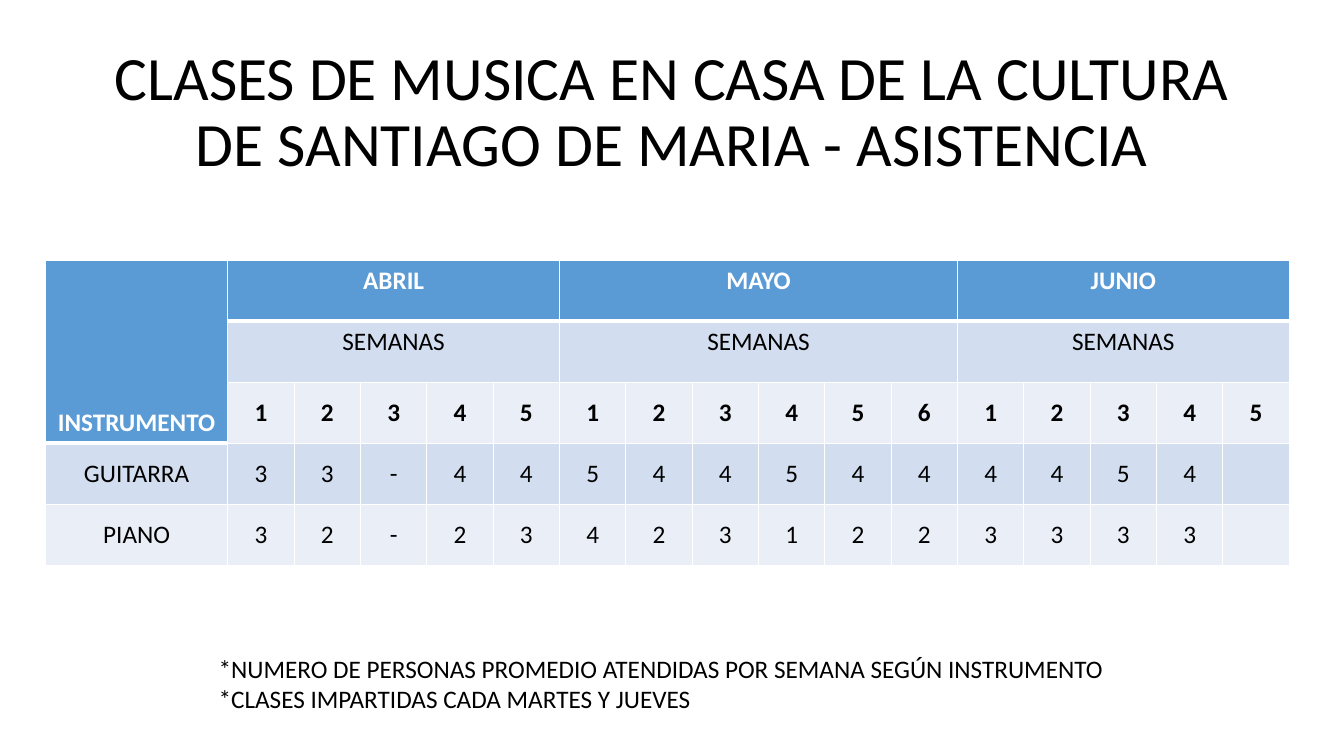
from dataclasses import dataclass

from lxml import etree
from pptx import Presentation
from pptx import util as u
from pptx.dml.color import RGBColor
from pptx.enum import text
from pptx.oxml import ns
from pptx.slide import Slide
from pptx.table import Table
from pptx.text.text import TextFrame

"""Build the music class attendance slide."""


@dataclass(frozen=True)
class Theme:
    font: str = "Calibri"
    title_size: int = 44
    body_size: int = 18
    black: str = "000000"
    white: str = "FFFFFF"
    header: str = "5B9BD5"
    dark_band: str = "D2DEEF"
    light_band: str = "EAEFF7"
    thin_rule: float = 1
    thick_rule: float = 3


@dataclass(frozen=True)
class Month:
    name: str
    weeks: int


@dataclass(frozen=True)
class Instrument:
    name: str
    attendance: tuple[str, ...]


@dataclass(frozen=True)
class TextBlock:
    lines: tuple[str, ...]
    box: tuple[float, float, float, float]
    size: int
    align: text.PP_ALIGN
    anchor: text.MSO_ANCHOR
    spacing: float


@dataclass(frozen=True)
class CellStyle:
    fill: str
    color: str
    bold: bool = False
    anchor: text.MSO_ANCHOR = text.MSO_ANCHOR.MIDDLE
    top: float = 1
    bottom: float = 1


THEME = Theme()
MONTHS = (Month("ABRIL", 5), Month("MAYO", 6), Month("JUNIO", 5))
INSTRUMENTS = (
    Instrument("GUITARRA", tuple("33-445445444454") + ("",)),
    Instrument("PIANO", tuple("32-234231223333") + ("",)),
)
TITLE = TextBlock(
    ("CLASES DE MUSICA EN CASA DE LA CULTURA DE SANTIAGO DE MARIA - ASISTENCIA",),
    (0.92, 0.4, 11.5, 1.45), THEME.title_size,
    text.PP_ALIGN.CENTER, text.MSO_ANCHOR.MIDDLE, 0.9,
)
NOTES = TextBlock(
    ("*NUMERO DE PERSONAS PROMEDIO ATENDIDAS POR SEMANA SEGÚN INSTRUMENTO",
     "*CLASES IMPARTIDAS CADA MARTES Y JUEVES"),
    (2.07, 6.43, 9.2, 0.71), THEME.body_size,
    text.PP_ALIGN.LEFT, text.MSO_ANCHOR.TOP, 1.0,
)
TABLE_BOX = (0.45, 2.58, 12.34, 3.03)
INSTRUMENT_WIDTH = 1.81
HEADER_ROWS = 3

CORNER = CellStyle(THEME.header, THEME.white, True, text.MSO_ANCHOR.BOTTOM,
                   bottom=THEME.thick_rule)
MONTH = CellStyle(THEME.header, THEME.white, True, text.MSO_ANCHOR.TOP,
                  bottom=THEME.thick_rule)
SEMANAS = CellStyle(THEME.dark_band, THEME.black, anchor=text.MSO_ANCHOR.TOP,
                    top=THEME.thick_rule)
WEEK = CellStyle(THEME.light_band, THEME.black, True)


def write(frame: TextFrame, lines: tuple[str, ...], size: int, color: str,
          align: text.PP_ALIGN, bold: bool = False, spacing: float = 1.0) -> None:
    """Fill a text frame with evenly styled paragraphs."""
    frame.text = "\n".join(lines)
    for paragraph in frame.paragraphs:
        paragraph.alignment = align
        paragraph.line_spacing = spacing
        paragraph.font.name = THEME.font
        paragraph.font.size = u.Pt(size)
        paragraph.font.bold = bold
        paragraph.font.color.rgb = RGBColor.from_string(color)


def add_text(slide: Slide, block: TextBlock) -> None:
    """Place a wrapped text block on the slide."""
    frame = slide.shapes.add_textbox(*map(u.Inches, block.box)).text_frame
    frame.word_wrap = True
    frame.vertical_anchor = block.anchor
    write(frame, block.lines, block.size, THEME.black, block.align,
          spacing=block.spacing)


def put(table: Table, row: int, col: int, content: str, style: CellStyle,
        rows: int = 1, cols: int = 1) -> None:
    """Write, rule and fill one cell, merging its span."""
    rules = {"L": THEME.thin_rule, "R": THEME.thin_rule,
             "T": style.top, "B": style.bottom}
    for r in range(row, row + rows):
        for c in range(col, col + cols):
            cell = table.cell(r, c)
            properties = cell._tc.get_or_add_tcPr()
            for side, width in rules.items():
                line = etree.SubElement(properties, ns.qn(f"a:ln{side}"),
                                        w=str(u.Pt(width)))
                solid = etree.SubElement(line, ns.qn("a:solidFill"))
                etree.SubElement(solid, ns.qn("a:srgbClr"), val=THEME.white)
            cell.fill.solid()
            cell.fill.fore_color.rgb = RGBColor.from_string(style.fill)
    origin = table.cell(row, col)
    if rows * cols > 1:
        origin.merge(table.cell(row + rows - 1, col + cols - 1))
    origin.vertical_anchor = style.anchor
    write(origin.text_frame, (content,), THEME.body_size, style.color,
          text.PP_ALIGN.CENTER, style.bold)


def add_attendance(slide: Slide) -> None:
    """Draw the attendance table by month, week and instrument."""
    weeks = sum(month.weeks for month in MONTHS)
    row_count = HEADER_ROWS + len(INSTRUMENTS)
    left, top, width, height = TABLE_BOX
    table = slide.shapes.add_table(row_count, weeks + 1,
                                   *map(u.Inches, TABLE_BOX)).table
    table.first_row = table.horz_banding = False
    for row in table.rows:
        row.height = u.Inches(height / row_count)
    for col, column in enumerate(table.columns):
        column.width = u.Inches((width - INSTRUMENT_WIDTH) / weeks
                                if col else INSTRUMENT_WIDTH)

    put(table, 0, 0, "INSTRUMENTO", CORNER, rows=HEADER_ROWS)
    first = 1
    for month in MONTHS:
        put(table, 0, first, month.name, MONTH, cols=month.weeks)
        put(table, 1, first, "SEMANAS", SEMANAS, cols=month.weeks)
        for week in range(month.weeks):
            put(table, 2, first + week, str(week + 1), WEEK)
        first += month.weeks

    for index, instrument in enumerate(INSTRUMENTS):
        band = THEME.light_band if index % 2 else THEME.dark_band
        for col, value in enumerate((instrument.name, *instrument.attendance)):
            under_corner = index == 0 and col == 0
            rule = THEME.thick_rule if under_corner else THEME.thin_rule
            put(table, HEADER_ROWS + index, col, value,
                CellStyle(band, THEME.black, top=rule))


def main() -> None:
    """Build and save the slide."""
    deck = Presentation()
    deck.slide_width, deck.slide_height = u.Inches(13.33), u.Inches(7.5)
    slide = deck.slides.add_slide(deck.slide_layouts[6])
    add_text(slide, TITLE)
    add_attendance(slide)
    add_text(slide, NOTES)
    deck.save("out.pptx")


if __name__ == "__main__":
    main()
